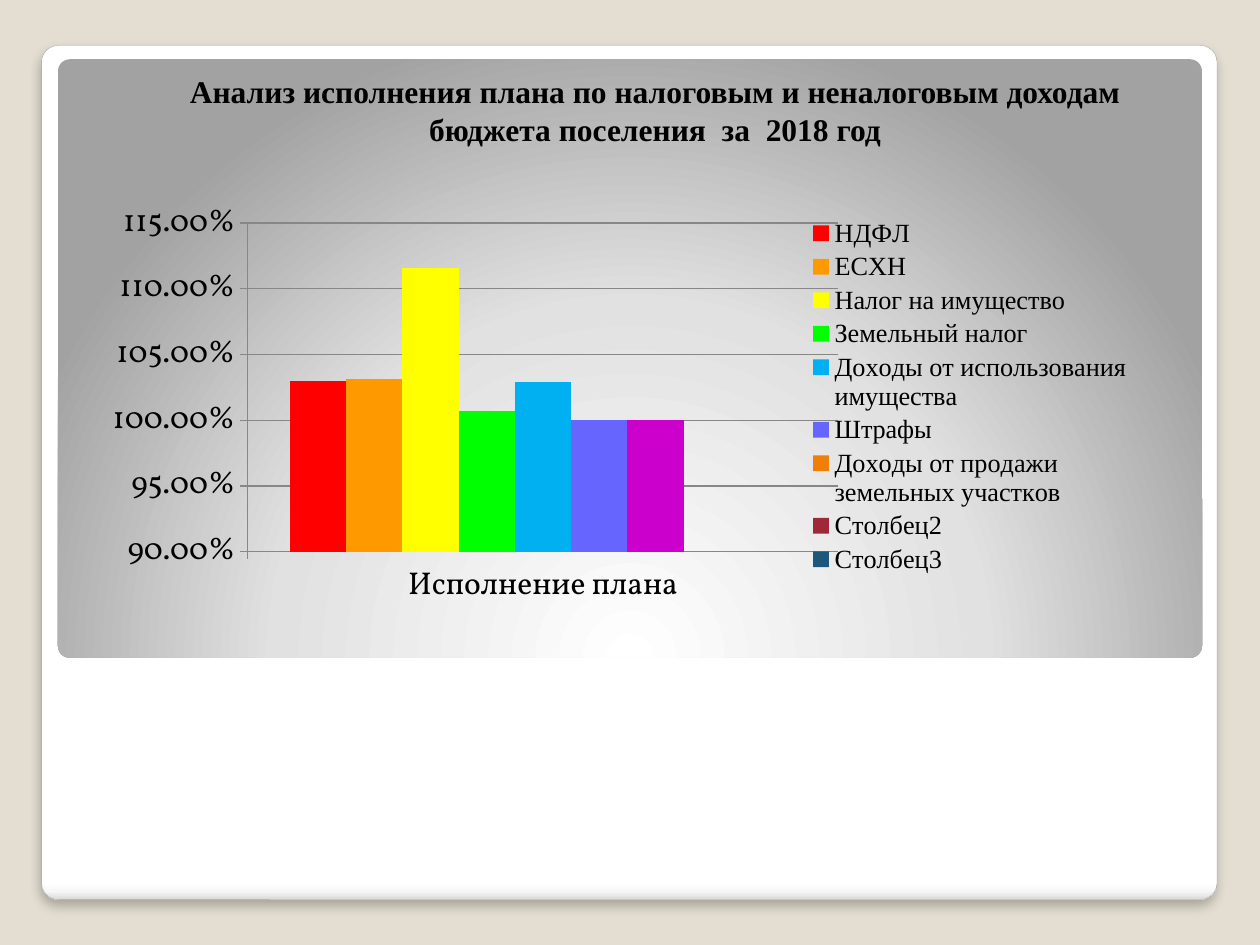
from pptx import Presentation
from pptx.chart.data import CategoryChartData as Data
from pptx.dml.color import RGBColor as RGB
from pptx.enum.chart import XL_CHART_TYPE as Kind, XL_LEGEND_POSITION as Side, XL_TICK_MARK as Tick
from pptx.enum.shapes import MSO_SHAPE as Form
from pptx.enum.text import MSO_AUTO_SIZE as Fit, PP_ALIGN as Align
from pptx.oxml import parse_xml
from pptx.oxml.ns import nsdecls, qn
from pptx.util import Inches, Pt

HUES = {
    "back": "E3DED1", "edge": "A4A4A4", "text": "000000", "grid": "878787",
    "red": "FF0000", "orange": "FF9900", "yellow": "FFFF00", "green": "00FF00",
    "blue": "00B0F0", "violet": "6666FF", "amber": "F07F09", "purple": "CC00CC",
    "wine": "9F2936", "navy": "1B587C",
}
TITLE = "Анализ исполнения плана по налоговым и неналоговым доходам бюджета поселения  за  2018 год"
SERIES = [
    ("НДФЛ", 1.03, "red"),
    ("ЕСХН", 1.031, "orange"),
    ("Налог на имущество", 1.116, "yellow"),
    ("Земельный налог", 1.007, "green"),
    ("Доходы от использования имущества", 1.029, "blue"),
    ("Штрафы", 1, "violet"),
    ("Доходы от продажи земельных участков", 1, "amber"),
    ("Столбец2", None, "wine"),
    ("Столбец3", None, "navy"),
]
FRAME = [(0, "FFFFFF"), (98, "FFFFFF"), (99, "F7F7F7"), (100, "DADADA")]
PANEL = [(0, "FFFFFF"), (55, "E1E1E1"), (100, "A2A2A2")]
DOWN = '<a:lin ang="5400000" scaled="0"/>'
GLOW = '<a:path path="circle"><a:fillToRect l="50000" t="175000" r="50000" b="-75000"/></a:path>'
SHADE = ('<a:effectLst {}><a:outerShdw blurRad="76200" dist="50800" dir="5400000" rotWithShape="0">'
         '<a:srgbClr val="000000"><a:alpha val="25000"/></a:srgbClr></a:outerShdw></a:effectLst>')


class Deck:
    """Holds the style and the current slide."""

    def __init__(self, wide, high):
        self.show = Presentation()
        self.show.slide_width, self.show.slide_height = Inches(wide), Inches(high)
        self.slide = self.show.slides.add_slide(self.show.slide_layouts[6])
        self.paint(self.slide.background.fill, "back")

    def paint(self, fill, hue):
        fill.solid()
        fill.fore_color.rgb = RGB.from_string(HUES[hue])

    def style(self, font, size, name, bold=False):
        font.size, font.name, font.bold = Pt(size), name, bold
        font.color.rgb = RGB.from_string(HUES["text"])

    def card(self, box, stops, way, edge=None):
        card = self.slide.shapes.add_shape(Form.ROUNDED_RECTANGLE, *map(Inches, box))
        card.adjustments[0] = 0.02
        card.shadow.inherit = False
        marks = "".join(f'<a:gs pos="{at * 1000}"><a:srgbClr val="{hue}"/></a:gs>' for at, hue in stops)
        grad = parse_xml(f'<a:gradFill {nsdecls("a")} rotWithShape="1"><a:gsLst>{marks}</a:gsLst>{way}</a:gradFill>')
        prop = card.element.spPr
        prop.find(qn("a:prstGeom")).addnext(grad)
        if edge:
            self.paint(card.line.fill, edge)
            card.line.width = Pt(0.16)
            flat = prop.find(qn("a:effectLst"))
            prop.replace(flat, parse_xml(SHADE.format(nsdecls("a"))))
        else:
            card.line.fill.background()

    def title(self, box, text):
        frame = self.slide.shapes.add_textbox(*map(Inches, box)).text_frame
        frame.word_wrap, frame.auto_size = True, Fit.SHAPE_TO_FIT_TEXT
        para = frame.paragraphs[0]
        para.text, para.alignment = text, Align.CENTER
        self.style(para.font, 18, "Times New Roman", True)

    def place(self, node, box, inner=False):
        for old in node.findall(qn("c:layout")):
            node.remove(old)
        part = '<c:layoutTarget val="inner"/>' if inner else ""
        part += "".join(f'<c:{key}Mode val="edge"/>' for key in "xy")
        part += "".join(f'<c:{key} val="{val}"/>' for key, val in zip("xywh", box))
        spot = parse_xml(f'<c:layout {nsdecls("c")}><c:manualLayout>{part}</c:manualLayout></c:layout>')
        node.insert(0 if inner else 1, spot)

    def axis(self, axis):
        axis.major_tick_mark, axis.minor_tick_mark = Tick.OUTSIDE, Tick.NONE
        self.rule(axis.format.line)

    def rule(self, line):
        self.paint(line.fill, "grid")
        line.width = Pt(0.75)

    def chart(self, box, label, rows):
        data = Data(number_format="0.00%")
        data.categories = [label]
        for name, val, _ in rows:
            data.add_series(name, [val])
        chart = self.slide.shapes.add_chart(Kind.COLUMN_CLUSTERED, *map(Inches, box), data).chart
        chart.has_title = False
        self.style(chart.font, 18, "Vollkorn")
        plot = chart.plots[0]
        plot.gap_width, plot.overlap, plot.vary_by_categories = 150, 0, False
        for bar, (_, _, hue) in zip(plot.series, rows):
            self.paint(bar.format.fill, hue)
            bar.invert_if_negative = False
            if hue == "amber":
                self.paint(bar.points[0].format.fill, "purple")
        self.axis(chart.category_axis)
        scale = chart.value_axis
        self.axis(scale)
        scale.minimum_scale, scale.maximum_scale, scale.major_unit = 0.9, 1.15, 0.05
        scale.tick_labels.number_format = "0.00%"
        scale.tick_labels.number_format_is_linked = False
        scale.has_major_gridlines = True
        self.rule(scale.major_gridlines.format.line)
        chart.has_legend = True
        key = chart.legend
        key.position, key.include_in_layout = Side.RIGHT, False
        self.style(key.font, 15, "Times New Roman")
        root = chart.element if hasattr(chart, "element") else chart._chartSpace
        self.place(next(root.iter(qn("c:plotArea"))), (0.147, 0.071, 0.567, 0.767), True)
        self.place(next(root.iter(qn("c:legend"))), (0.68, 0.05, 0.32, 0.85))


def main():
    deck = Deck(10, 7.5)
    deck.card((0.33, 0.36, 9.33, 6.78), FRAME, DOWN, "edge")
    deck.card((0.46, 0.47, 9.08, 4.75), PANEL, GLOW)
    deck.title((1.38, 0.52, 7.64, 0.71), TITLE)
    deck.chart((0.75, 1.53, 8.27, 3.4), "Исполнение плана", SERIES)
    deck.show.save("out.pptx")


if __name__ == "__main__":
    main()
